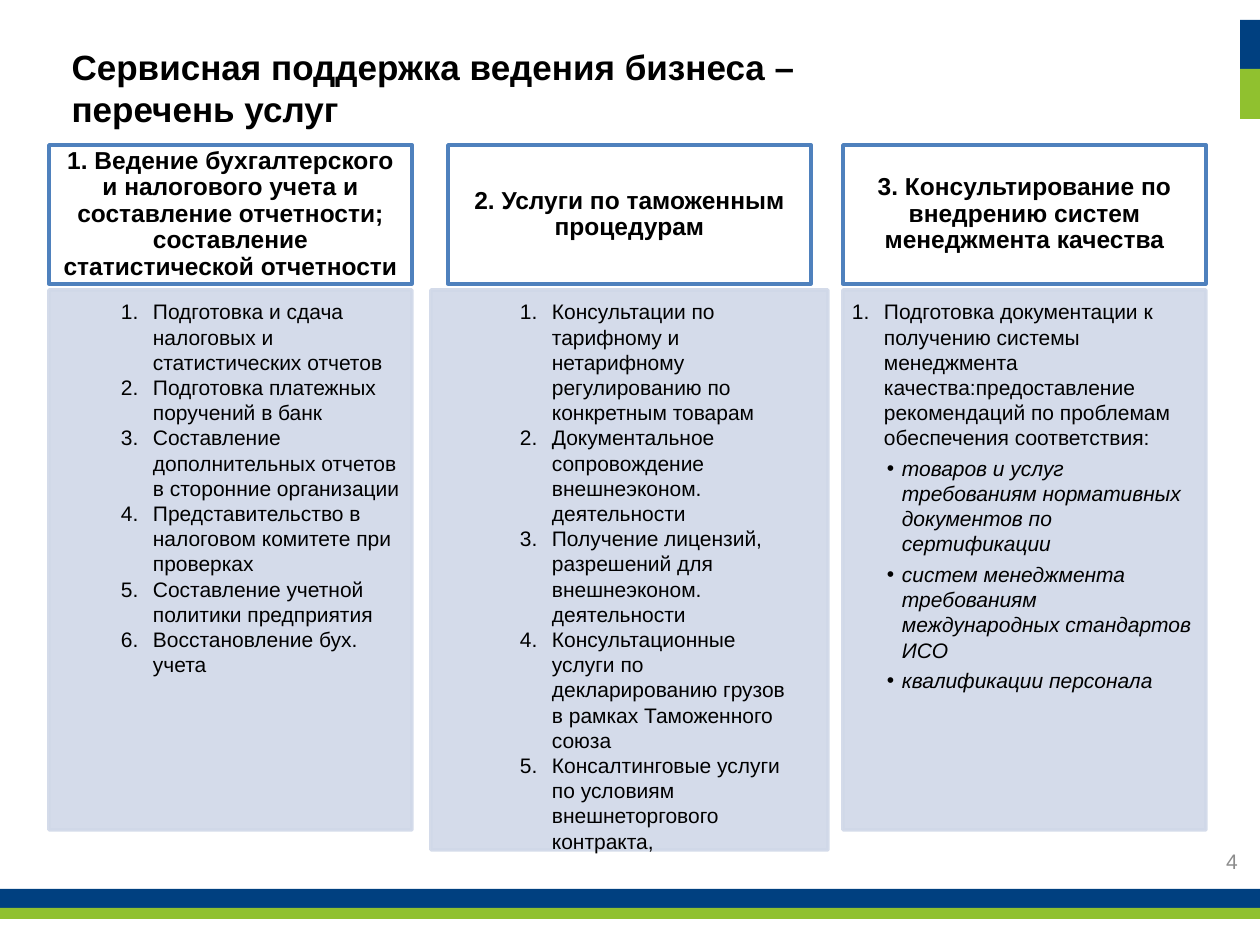
from dataclasses import dataclass
from typing import Any

from lxml.etree import SubElement
from pptx import Presentation
from pptx.dml.color import RGBColor
from pptx.enum.shapes import MSO_SHAPE as Preset
from pptx.enum.text import MSO_ANCHOR as Anchor, MSO_AUTO_SIZE as AutoSize, PP_ALIGN as Align
from pptx.oxml.ns import qn
from pptx.util import Emu, Pt

PX_PER_INCH = 126
FONT = "Arial"
NAVY, GREEN, BLUE, PALE = "004080", "90C12F", "4F81BD", "D0D8E8"
BLACK, WHITE, GRAY = "000000", "FFFFFF", "8C8C8C"
COLUMN_WIDTH, HEADER_TOP, HEADER_HEIGHT = 363, 145, 139
PANEL_TOP, PANEL_HEIGHT = 290, 540


@dataclass(frozen=True)
class Box:
    left: int
    top: int
    width: int
    height: int


@dataclass(frozen=True)
class Item:
    text: str
    margin: int = 95
    hanging: int = 32
    space_after: int = 0
    numbered: bool = True
    italic: bool = False


@dataclass(frozen=True)
class Column:
    left: int
    heading: str
    items: tuple[Item, ...]
    extra_side: int = 0
    extra_height: int = 0


def goal(text: str) -> Item:
    return Item(text, margin=50, hanging=15, space_after=3, numbered=False, italic=True)


BANDS = (
    (Box(0, 889, 1260, 19), NAVY),
    (Box(0, 908, 1260, 11), GREEN),
    (Box(1240, 20, 20, 49), NAVY),
    (Box(1240, 69, 20, 50), GREEN),
)

COLUMNS = (
    Column(49, "1. Ведение бухгалтерского и налогового учета и составление отчетности; "
               "составление статистической отчетности", (
        Item("Подготовка и сдача налоговых и статистических отчетов"),
        Item("Подготовка платежных поручений в банк"),
        Item("Составление дополнительных отчетов в сторонние организации"),
        Item("Представительство в налоговом комитете при проверках"),
        Item("Составление учетной политики предприятия"),
        Item("Восстановление бух. учета"),
    )),
    Column(448, "2. Услуги по таможенным процедурам", (
        Item("Консультации по тарифному и нетарифному регулированию по конкретным товарам"),
        Item("Документальное сопровождение внешнеэконом. деятельности"),
        Item("Получение лицензий, разрешений для внешнеэконом. деятельности"),
        Item("Консультационные услуги по декларированию грузов в рамках Таможенного союза"),
        Item("Консалтинговые услуги по условиям внешнеторгового контракта,"),
    ), extra_side=17, extra_height=20),
    Column(843, "3. Консультирование по внедрению систем менеджмента качества", (
        Item("Подготовка документации к получению системы менеджмента "
             "качества:предоставление рекомендаций по проблемам обеспечения соответствия:",
             margin=32, space_after=3),
        goal("товаров и услуг требованиям нормативных документов по сертификации"),
        goal("систем менеджмента требованиям международных стандартов ИСО"),
        goal("квалификации персонала"),
    )),
)


def px(value: int) -> Emu:
    return Emu(round(value * 914400 / PX_PER_INCH))


def color(value: str) -> RGBColor:
    return RGBColor.from_string(value)


def apply(target: Any, values: dict[str, Any]) -> None:
    for name, value in values.items():
        setattr(target, name, value)


def bounds(box: Box) -> tuple[Emu, ...]:
    return tuple(px(value) for value in (box.left, box.top, box.width, box.height))


def set_margins(frame: Any, left: int, top: int, right: int, bottom: int) -> None:
    apply(frame, {"margin_left": px(left), "margin_top": px(top),
                  "margin_right": px(right), "margin_bottom": px(bottom)})


def write(paragraph: Any, text: str, size: int, ink: str = BLACK, **style: bool) -> None:
    run = paragraph.add_run()
    run.text = text
    apply(run.font, {"name": FONT, "size": Pt(size), **style})
    run.font.color.rgb = color(ink)


def add_rectangle(slide: Any, box: Box, fill: str, outline: str | None = None) -> Any:
    shape = slide.shapes.add_shape(Preset.RECTANGLE, *bounds(box))
    shape.shadow.inherit = False
    shape.fill.solid()
    shape.fill.fore_color.rgb = color(fill)
    if outline is None:
        shape.line.fill.background()
    else:
        shape.line.color.rgb = color(outline)
        shape.line.width = Pt(2)
    return shape


def add_text_box(slide: Any, box: Box) -> Any:
    frame = slide.shapes.add_textbox(*bounds(box)).text_frame
    frame.word_wrap = True
    return frame


def add_title(slide: Any, text: str, box: Box) -> None:
    title = slide.shapes.title
    apply(title, dict(zip(("left", "top", "width", "height"), bounds(box))))
    frame = title.text_frame
    apply(frame, {"word_wrap": True, "vertical_anchor": Anchor.TOP, "auto_size": AutoSize.NONE})
    paragraph = frame.paragraphs[0]
    apply(paragraph, {"alignment": Align.LEFT, "space_after": Pt(3)})
    write(paragraph, text, 20, bold=True)


def add_heading(slide: Any, column: Column) -> None:
    box = Box(column.left, HEADER_TOP, COLUMN_WIDTH, HEADER_HEIGHT)
    frame = add_rectangle(slide, box, WHITE, BLUE).text_frame
    apply(frame, {"word_wrap": True, "vertical_anchor": Anchor.MIDDLE})
    set_margins(frame, 14, 8, 14, 8)
    paragraph = frame.paragraphs[0]
    apply(paragraph, {"alignment": Align.CENTER, "line_spacing": 0.9})
    write(paragraph, column.heading, 14, bold=True)


def add_item(paragraph: Any, item: Item) -> None:
    properties = paragraph._p.get_or_add_pPr()
    properties.set("marL", str(px(item.margin)))
    properties.set("indent", str(-px(item.hanging)))
    SubElement(properties, qn("a:buFont")).set("typeface", FONT)
    if item.numbered:
        SubElement(properties, qn("a:buAutoNum")).set("type", "arabicPeriod")
    else:
        SubElement(properties, qn("a:buChar")).set("char", "•")
    apply(paragraph, {"alignment": Align.LEFT, "space_after": Pt(item.space_after)})
    write(paragraph, item.text, 12, italic=item.italic)


def add_panel(slide: Any, column: Column) -> None:
    box = Box(column.left - column.extra_side, PANEL_TOP,
              COLUMN_WIDTH + 2 * column.extra_side, PANEL_HEIGHT + column.extra_height)
    panel = add_rectangle(slide, box, PALE, PALE)
    for solid in panel._element.spPr.iter(qn("a:srgbClr")):
        SubElement(solid, qn("a:alpha")).set("val", "90000")
    frame = add_text_box(slide, Box(column.left, PANEL_TOP, COLUMN_WIDTH, PANEL_HEIGHT))
    set_margins(frame, 9, 9, 12, 13)
    for index, item in enumerate(column.items):
        add_item(frame.add_paragraph() if index else frame.paragraphs[0], item)


def main() -> None:
    presentation = Presentation()
    apply(presentation, {"slide_width": px(1260), "slide_height": px(945)})
    slide = presentation.slides.add_slide(presentation.slide_layouts[5])
    for box, fill in BANDS:
        add_rectangle(slide, box, fill)
    add_title(slide, "Сервисная поддержка ведения бизнеса – перечень услуг", Box(59, 39, 833, 97))
    for column in COLUMNS:
        add_heading(slide, column)
        add_panel(slide, column)
    number = add_text_box(slide, Box(956, 836, 294, 50))
    number.vertical_anchor = Anchor.MIDDLE
    number.paragraphs[0].alignment = Align.RIGHT
    write(number.paragraphs[0], "4", 12, GRAY)
    presentation.save("out.pptx")


if __name__ == "__main__":
    main()
